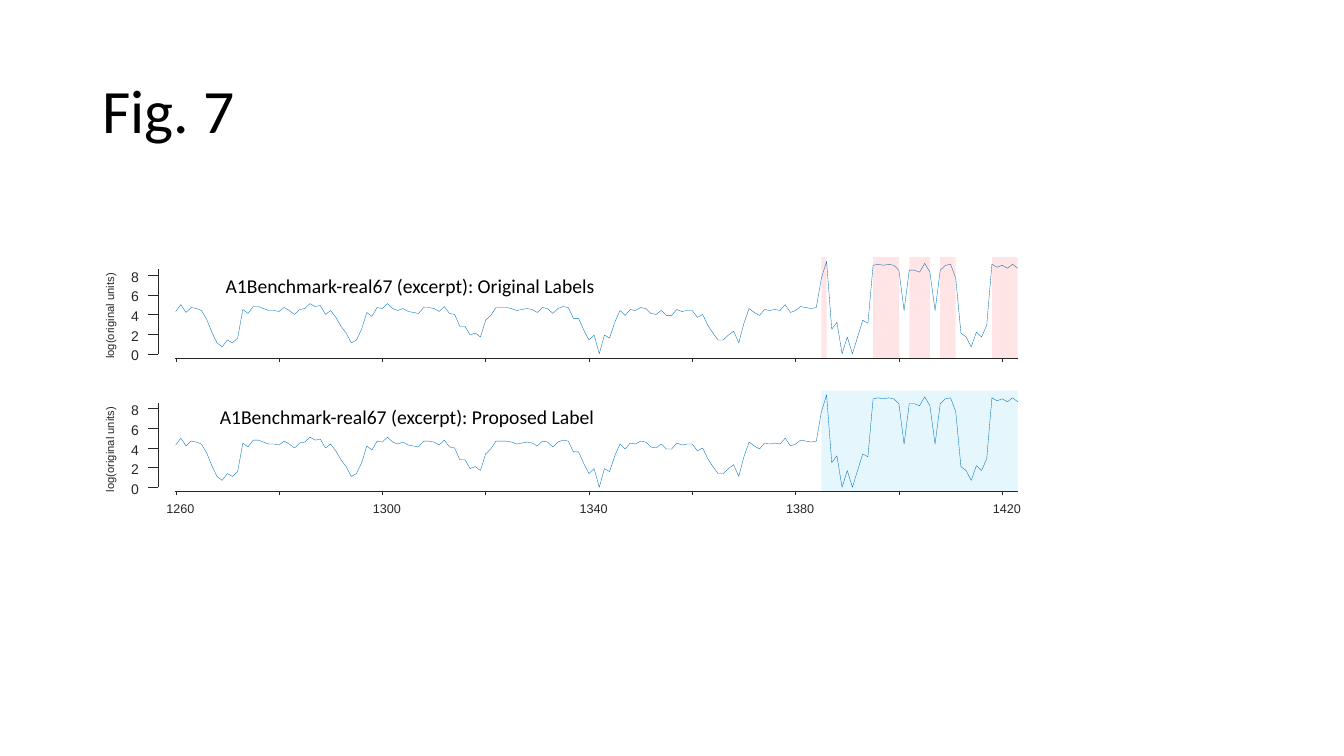
import pptx
import pptx.util
import pptx.dml.color
import pptx.enum.shapes
import pptx.enum.text
import pptx.oxml.ns
from lxml import etree

Pt = pptx.util.Pt
ALIGN = pptx.enum.text.PP_ALIGN
ANCHOR = pptx.enum.text.MSO_ANCHOR

FIRST, LAST = 1260, 1423
VALUES = [  # log of the series, one value per time step from FIRST to LAST
    4.3, 5.0, 4.2, 4.7, 4.6, 4.4, 3.5, 2.2, 1.1, 0.7, 1.4, 1.1, 1.6, 4.5, 4.1, 4.8, 4.8, 4.6, 4.4, 4.4,
    4.3, 4.7, 4.4, 4.0, 4.5, 4.6, 5.1, 4.8, 4.9, 4.0, 4.4, 3.7, 2.8, 2.1, 1.1, 1.4, 2.5, 4.2, 3.8, 4.7,
    4.6, 5.1, 4.6, 4.4, 4.6, 4.3, 4.2, 4.1, 4.7, 4.7, 4.6, 4.3, 4.8, 4.1, 4.0, 2.8, 2.8, 1.9, 2.1, 1.7,
    3.4, 3.9, 4.7, 4.7, 4.7, 4.6, 4.4, 4.5, 4.6, 4.5, 4.2, 4.7, 4.6, 4.1, 4.6, 4.8, 4.7, 3.6, 3.6, 2.4,
    1.4, 1.9, 0.0, 1.9, 1.6, 3.2, 4.4, 3.9, 4.5, 4.4, 4.7, 4.6, 4.1, 4.0, 4.4, 3.9, 3.9, 4.5, 4.3, 4.4,
    4.4, 3.7, 4.0, 2.9, 2.1, 1.4, 1.4, 1.9, 2.3, 1.1, 3.1, 4.6, 4.2, 3.9, 4.5, 4.4, 4.5, 4.4, 5.0, 4.2,
    4.4, 4.8, 4.7, 4.6, 4.7, 7.7, 9.4, 2.5, 3.2, 0.0, 1.7, 0.0, 1.7, 3.4, 3.1, 9.0, 9.1, 9.0, 9.1, 9.0,
    8.5, 4.4, 8.5, 8.5, 8.3, 9.2, 8.3, 4.4, 8.5, 9.0, 9.1, 7.7, 2.1, 1.7, 0.7, 2.2, 1.7, 2.9, 9.1, 8.8,
    9.0, 8.7, 9.1, 8.7,
]
ORIGINAL_SPANS = [(1385, 1386), (1395, 1400), (1402, 1406), (1408, 1411), (1418, 1423)]
PROPOSED_SPANS = [(1385, 1423)]


def color(hex_code):
    return pptx.dml.color.RGBColor.from_string(hex_code)


def time_x(t):
    return 125.5 + 3.69 * (t - FIRST)


class Figure:
    INK, CURVE, THIN = "262626", "0072BD", 0.25
    UNIT = 7.02  # points per log unit
    AXIS_GAP = 2.9  # from the zero level down to the time axis

    def __init__(self, s):
        self.s = s

    def format_text(self, tf, text, size, font, hex_code, align=ALIGN.LEFT):
        tf.text = text
        p = tf.paragraphs[0]
        p.alignment = align
        p.font.size, p.font.name = Pt(size), font
        p.font.color.rgb = color(hex_code)
        return p

    def title(self, text, x, y, w, h):
        sp = self.s.shapes.title
        sp.left, sp.top, sp.width, sp.height = Pt(x), Pt(y), Pt(w), Pt(h)
        sp.text_frame.vertical_anchor = ANCHOR.MIDDLE
        self.format_text(sp.text_frame, text, 44, "Calibri", "000000").line_spacing = 0.9

    def text(self, text, x, y, w, h, size, wrap=False, rotation=0):
        sp = self.s.shapes.add_textbox(Pt(x), Pt(y), Pt(w), Pt(h))
        sp.rotation = rotation
        tf = sp.text_frame
        tf.margin_left = tf.margin_right = tf.margin_top = tf.margin_bottom = 0
        tf.word_wrap = wrap
        tf.auto_size = pptx.enum.text.MSO_AUTO_SIZE.SHAPE_TO_FIT_TEXT
        self.format_text(tf, text, size, "Arial", self.INK)

    def caption(self, text, x, y):
        sp = self.s.shapes.add_textbox(Pt(x), Pt(y), Pt(327), Pt(24.5))
        sp.text_frame.word_wrap = True
        self.format_text(sp.text_frame, text, 14, "Calibri", "000000", ALIGN.CENTER)

    def line(self, x1, y1, x2, y2):
        c = self.s.shapes.add_connector(pptx.enum.shapes.MSO_CONNECTOR.STRAIGHT,
                                        Pt(x1), Pt(y1), Pt(x2), Pt(y2))
        c.line.color.rgb, c.line.width = color(self.INK), Pt(self.THIN)
        etree.SubElement(c.element.spPr, pptx.oxml.ns.qn("a:effectLst"))

    def axes(self, zero):
        base = zero + self.AXIS_GAP
        self.line(124.8, base, 727.2, base)
        for t in range(FIRST, LAST, 20):
            self.line(time_x(t), base + 2.7, time_x(t), base)
        self.line(113, zero, 113, zero - 60.5)
        for value in range(0, 9, 2):
            y = zero - value * self.UNIT
            self.line(106, y, 113, y)
            self.text(str(value), 93.6, y - 5, 5.8, 7.9, 10)
        self.text("log(original units)", 45.4, zero - 33.8, 65.5, 9.4, 8, True, 270)

    def time_labels(self, y):
        for t in range(FIRST, LAST, 40):
            self.text(str(t), time_x(t) - 6.7, y, 20.2, 7.2, 9)

    def curve(self, zero):
        points = [(Pt(time_x(t)), Pt(zero - v * self.UNIT)) for t, v in enumerate(VALUES, FIRST)]
        builder = self.s.shapes.build_freeform(*points[0])
        builder.add_line_segments(points[1:], close=False)
        sp = builder.convert_to_shape()
        sp.shadow.inherit = False
        sp.fill.background()
        sp.line.color.rgb, sp.line.width = color(self.CURVE), Pt(self.THIN)

    def bands(self, spans, zero, hex_code):
        """Shade the labelled time spans at 10% opacity."""
        for start, end in spans:
            x = time_x(start)
            sp = self.s.shapes.add_shape(pptx.enum.shapes.MSO_SHAPE.RECTANGLE, Pt(x),
                                         Pt(zero + self.AXIS_GAP - 72), Pt(time_x(end) - x), Pt(72))
            sp.shadow.inherit = False
            sp.line.fill.background()
            sp.fill.solid()
            sp.fill.fore_color.rgb = color(hex_code)
            rgb = sp.element.spPr.find(".//" + pptx.oxml.ns.qn("a:srgbClr"))
            etree.SubElement(rgb, pptx.oxml.ns.qn("a:alpha"), val="10000")


def main():
    prs = pptx.Presentation()
    prs.slide_width, prs.slide_height = Pt(960), Pt(540)
    fig = Figure(prs.slides.add_slide(prs.slide_layouts[5]))
    fig.title("Fig. 7", 66, 28.75, 828, 104.4)

    original_zero, proposed_zero = 252.7, 348.1
    fig.axes(original_zero)
    fig.curve(original_zero)
    fig.caption("A1Benchmark-real67 (excerpt): Original Labels", 129.6, 192.2)
    fig.bands(ORIGINAL_SPANS, original_zero, "FF0000")

    fig.bands(PROPOSED_SPANS, proposed_zero, "00B0F0")
    fig.axes(proposed_zero)
    fig.time_labels(357.8)
    fig.curve(proposed_zero)
    fig.caption("A1Benchmark-real67 (excerpt): Proposed Label", 127.4, 285.8)
    prs.save("out.pptx")


if __name__ == "__main__":
    main()
